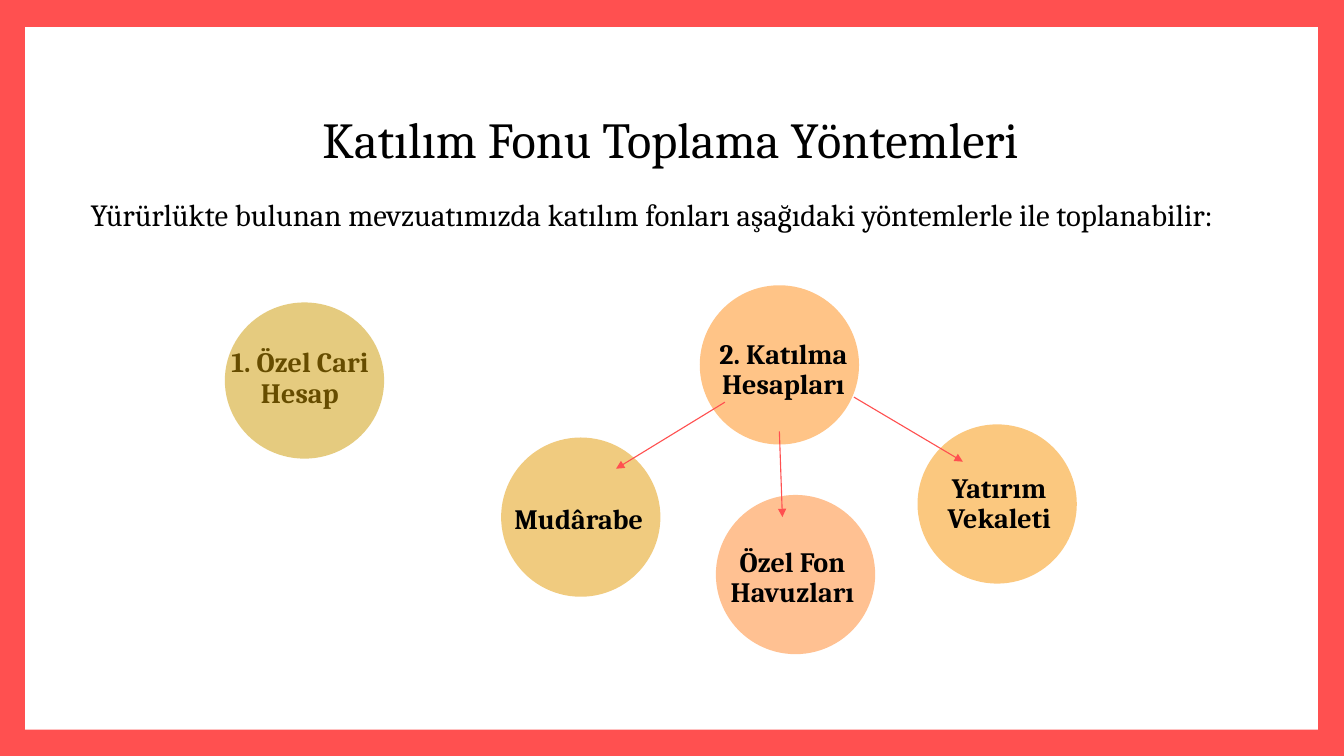
from pptx import Presentation
from pptx.dml.color import RGBColor
from pptx.enum import shapes as sh, text as tx
from pptx.oxml import ns
from pptx.util import Inches, Pt
from lxml import etree

COLORS = {
    "frame": "FF5050", "page": "FFFFFF", "text": "000000",
    "current": "CC9900", "participation": "FF8A10", "mudaraba": "E39800",
    "pools": "FF8427", "agency": "F99300",
}
FONT = "Cambria"
DIAMETER = 1.58

# label, colour, circle left, top, height, label box, label behind circle
METHODS = [
    ("Özel Fon Havuzları", "pools", 7.1, 4.91, DIAMETER, (7.04, 5.16, 1.64, 1.15), False),
    ("2. Katılma Hesapları", "participation", 6.94, 2.83, DIAMETER, (6.95, 3.1, 1.64, 1.15), False),
    ("Yatırım Vekaleti", "agency", 9.1, 4.21, DIAMETER, (9.09, 4.43, 1.64, 1.15), False),
    ("Mudârabe", "mudaraba", 4.97, 4.34, DIAMETER, (4.92, 4.59, 1.64, 1.15), False),
    ("1. Özel Cari Hesap", "current", 2.23, 3, 1.55, (2.06, 3.23, 1.83, 1.06), True),
]
BRANCHES = [
    (7.19, 3.99, 6.11, 4.65),
    (8.47, 3.94, 9.55, 4.58),
    (7.73, 4.28, 7.76, 5.13),
]


def inches(box):
    return [Inches(length) for length in box]


def rgb(name):
    return RGBColor.from_string(COLORS[name])


def add_filled(slide, kind, box, color, opacity=100):
    shape = slide.shapes.add_shape(kind, *inches(box))
    shape.shadow.inherit = False
    shape.line.fill.background()
    shape.fill.solid()
    shape.fill.fore_color.rgb = rgb(color)
    if opacity < 100:
        fill_color = shape._element.spPr.find(".//" + ns.qn("a:srgbClr"))
        etree.SubElement(fill_color, ns.qn("a:alpha"), val=str(opacity * 1000))


def add_words(slide, box, words, size, bold=False, align=tx.PP_ALIGN.CENTER,
              anchor=tx.MSO_ANCHOR.MIDDLE, spacing=0.9, inset=(0.1, 0.05)):
    frame = slide.shapes.add_textbox(*inches(box)).text_frame
    frame.word_wrap = True
    frame.vertical_anchor = anchor
    frame.margin_left = frame.margin_right = Inches(inset[0])
    frame.margin_top = frame.margin_bottom = Inches(inset[1])
    paragraph = frame.paragraphs[0]
    paragraph.alignment = align
    paragraph.line_spacing = spacing
    run = paragraph.add_run()
    run.text = words
    run.font.name, run.font.size, run.font.bold = FONT, Pt(size), bold
    run.font.color.rgb = rgb("text")


def add_page(slide, box):
    slide.background.fill.solid()
    slide.background.fill.fore_color.rgb = rgb("frame")
    add_filled(slide, sh.MSO_SHAPE.RECTANGLE, box, "page")


def add_heading(slide, box):
    left, top, width, height = box
    add_words(slide, (left + 0.45, top, width - 0.9, height),
              "Katılım Fonu Toplama Yöntemleri", 36)
    add_words(slide, (left, top + 1.22, width, 0.84),
              "Yürürlükte bulunan mevzuatımızda katılım fonları aşağıdaki "
              "yöntemlerle ile toplanabilir:", 22,
              align=tx.PP_ALIGN.JUSTIFY, anchor=tx.MSO_ANCHOR.TOP, spacing=1.0)


def add_method(slide, box, color, label, label_box, label_behind):
    def draw_label():
        add_words(slide, label_box, label, 20, bold=True, inset=(0, 0))

    if label_behind:
        draw_label()
    add_filled(slide, sh.MSO_SHAPE.OVAL, box, color, opacity=50)
    if not label_behind:
        draw_label()


def add_branch(slide, ends):
    arrow = slide.shapes.add_connector(sh.MSO_CONNECTOR.STRAIGHT, *inches(ends))
    arrow.line.color.rgb = rgb("frame")
    arrow.line.width = Pt(0.79)
    etree.SubElement(arrow.line._get_or_add_ln(), ns.qn("a:tailEnd"), type="triangle")
    etree.SubElement(arrow._element.spPr, ns.qn("a:effectLst"))


def main():
    deck = Presentation()
    deck.slide_width, deck.slide_height = Inches(13.33), Inches(7.5)
    slide = deck.slides.add_slide(deck.slide_layouts[6])

    # Page and heading
    add_page(slide, (0.25, 0.27, 12.82, 6.97))
    add_heading(slide, (0.8, 0.67, 11.7, 1.48))

    # Fund collection methods
    for label, color, left, top, height, label_box, label_behind in METHODS:
        add_method(slide, (left, top, DIAMETER, height), color,
                   label, label_box, label_behind)

    # Arrows to the kinds of participation account
    for ends in BRANCHES:
        add_branch(slide, ends)

    deck.save("out.pptx")


if __name__ == "__main__":
    main()
